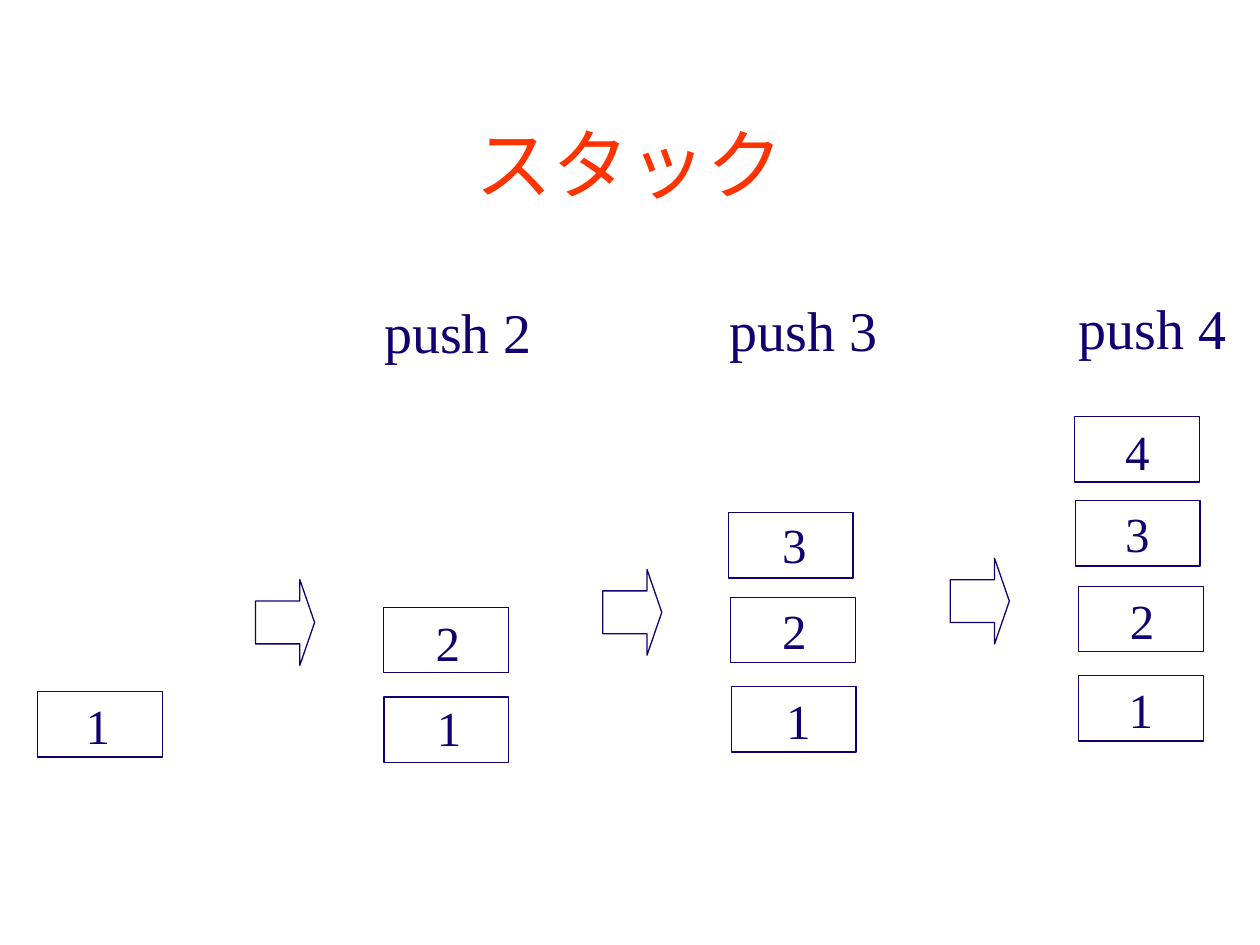
import pptx
import pptx.util
import pptx.dml.color
import pptx.enum.shapes
import pptx.enum.text

Pt = pptx.util.Pt
Kind = pptx.enum.shapes.MSO_SHAPE
Anchor = pptx.enum.text.MSO_ANCHOR
Align = pptx.enum.text.PP_ALIGN
Fit = pptx.enum.text.MSO_AUTO_SIZE

NAVY = "100070"
RED = "FF3300"
FONT = "Times New Roman"
BOX = (71.3, 37.4)
ARROW = (33.8, 49)
DIGIT = (28.8, 41)
LABEL = (99.4, 45.4)

# Each cell: box left, box top, digit left, digit top; bottom cell first.
STACKS = [
    [(21.6, 395.3, 41.8, 393.8)],
    [(219.4, 398.2, 242.6, 395.3), (219.2, 347, 241.9, 346.3)],
    [(417.8, 392.4, 442.1, 391), (417.4, 341.3, 439.9, 339.8),
     (416.2, 293, 439.9, 290.2)],
    [(616.3, 386, 637.9, 384.5), (616.3, 335, 638.6, 334.1),
     (614.4, 286, 635.8, 284.4), (614, 238, 635.8, 237.6)],
]
PUSHES = [
    ("push 2", (212.4, 166.3), (146, 331.2)),
    ("push 3", (409.7, 165.6), (344.4, 325.4)),
    ("push 4", (609.1, 164.2), (543, 319)),
]


def color(code):
    return pptx.dml.color.RGBColor.from_string(code)


def write(slide, text, spot, area, size=28, ink=NAVY, wrap=False,
          align=Align.LEFT, anchor=Anchor.TOP, fit=Fit.SHAPE_TO_FIT_TEXT):
    box = slide.shapes.add_textbox(*map(Pt, spot + area))
    frame = box.text_frame
    frame.word_wrap = wrap
    frame.auto_size = fit
    frame.vertical_anchor = anchor
    para = frame.paragraphs[0]
    para.alignment = align
    run = para.add_run()
    run.text = text
    run.font.name = FONT
    run.font.size = Pt(size)
    run.font.color.rgb = color(ink)


def draw(slide, kind, spot, area):
    shape = slide.shapes.add_shape(kind, *map(Pt, spot + area))
    shape.shadow.inherit = False
    shape.fill.background()
    shape.line.color.rgb = color(NAVY)
    shape.line.width = Pt(0.75)
    return shape


def main():
    deck = pptx.Presentation()
    deck.slide_width, deck.slide_height = Pt(720), Pt(540)
    slide = deck.slides.add_slide(deck.slide_layouts[6])

    write(slide, "スタック", (54, 48), (612, 90), size=44, ink=RED, wrap=True,
          align=Align.CENTER, anchor=Anchor.MIDDLE, fit=Fit.NONE)

    for stack in STACKS:
        for num, (left, top, x, y) in enumerate(stack, 1):
            draw(slide, Kind.RECTANGLE, (left, top), BOX)
            write(slide, str(num), (x, y), DIGIT)

    for text, spot, place in PUSHES:
        arrow = draw(slide, Kind.RIGHT_ARROW, place, ARROW)
        arrow.adjustments[0] = 0.5
        arrow.adjustments[1] = 0.25
        write(slide, text, spot, LABEL, size=32)

    deck.save("out.pptx")


if __name__ == "__main__":
    main()
